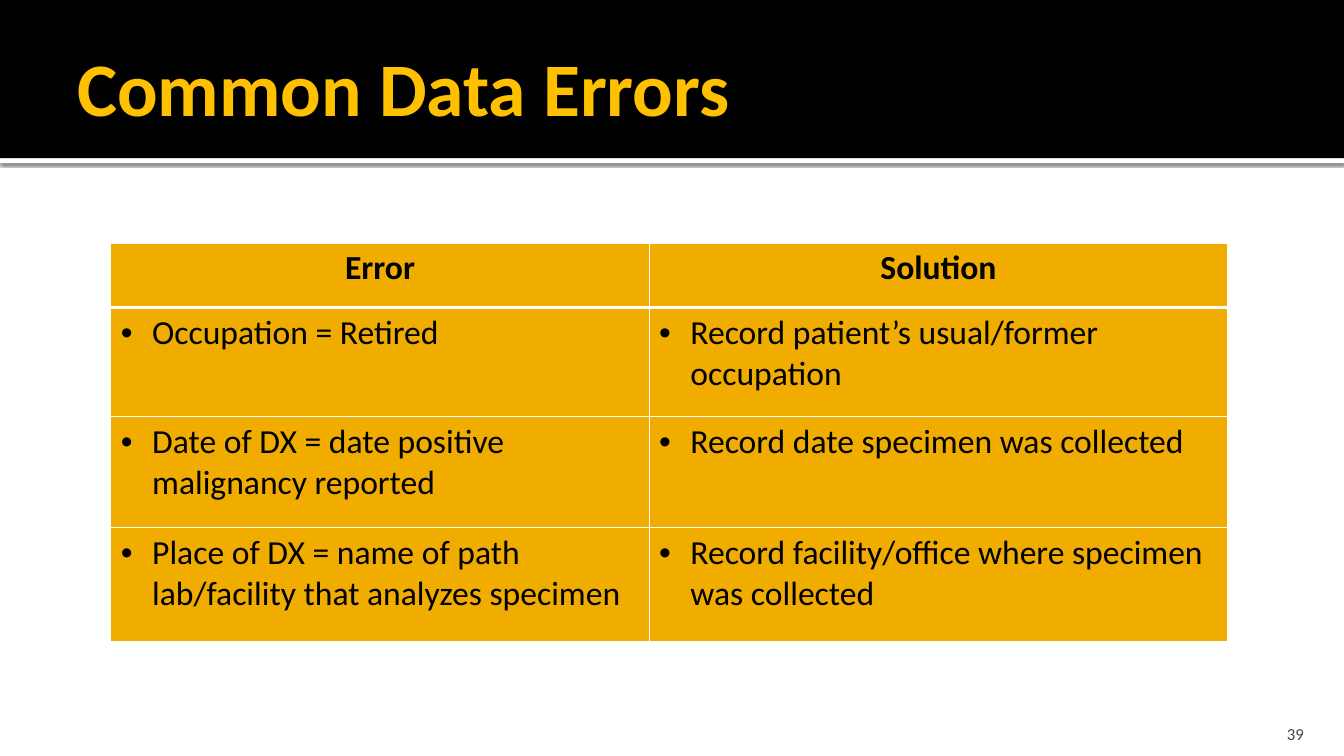
from dataclasses import dataclass
from typing import Any

import lxml.etree
import pptx
import pptx.dml.color
import pptx.enum.shapes
import pptx.enum.text
import pptx.oxml
import pptx.oxml.ns
import pptx.util

RGB = pptx.dml.color.RGBColor
ALIGN = pptx.enum.text.PP_ALIGN
ANCHOR = pptx.enum.text.MSO_ANCHOR
qn = pptx.oxml.ns.qn

BLACK = RGB(0x00, 0x00, 0x00)
WHITE = RGB(0xFF, 0xFF, 0xFF)
GOLD = RGB(0xFF, 0xC0, 0x00)
AMBER = RGB(0xF0, 0xAD, 0x00)
GREY = RGB(0x45, 0x45, 0x45)

WIDE = pptx.util.Inches(13.33)
HIGH = pptx.util.Inches(7.5)
INDENT = pptx.util.Inches(0.31)


@dataclass(frozen=True)
class Box:
    """A place on a grid of 100 columns by 100 rows."""
    left: float
    top: float
    width: float
    height: float

    def spans(self) -> tuple[int, int, int, int]:
        return (cols(self.left), rows(self.top),
                cols(self.width), rows(self.height))


@dataclass(frozen=True)
class Bar:
    box: Box
    fill: RGB
    shadow: bool


@dataclass(frozen=True)
class Style:
    size: int
    color: RGB
    bold: bool = False
    align: Any = ALIGN.LEFT


@dataclass(frozen=True)
class Fix:
    error: str
    answer: str
    height: float


BARS = [
    Bar(Box(0, 20.93, 100, 0.67), WHITE, True),
    Bar(Box(0, 0, 100, 20.93), BLACK, False),
]
TITLE_BOX = Box(5, 2.27, 90, 18.27)
PAGE_BOX = Box(89.72, 94.4, 8.03, 4)
TABLE_BOX = Box(8.25, 32.13, 83.1, 52.8)
WIDTHS = [40.05, 43.05]

TITLE = Style(54, GOLD, True)
PAGE = Style(12, GREY, align=ALIGN.RIGHT)
HEAD = Style(24, BLACK, True, ALIGN.CENTER)
BODY = Style(24, BLACK)

FIXES = [
    Fix("Error", "Solution", 8.53),
    Fix("Occupation = Retired",
        "Record patient’s usual/former occupation", 14.4),
    Fix("Date of DX = date positive malignancy reported",
        "Record date specimen was collected", 14.67),
    Fix("Place of DX = name of path lab/facility that analyzes specimen",
        "Record facility/office where specimen was collected", 15.2),
]


def cols(count: float) -> int:
    return round(WIDE * count / 100)


def rows(count: float) -> int:
    return round(HIGH * count / 100)


def assign(target: Any, values: dict[str, Any]) -> None:
    for name, value in values.items():
        setattr(target, name, value)


def place(shape: Any, box: Box) -> None:
    assign(shape, dict(zip(("left", "top", "width", "height"), box.spans())))


def write(frame: Any, text: str, style: Style) -> None:
    line = frame.paragraphs[0]
    line.alignment = style.align
    run = line.add_run()
    run.text = text
    assign(run.font, {"name": "Calibri", "bold": style.bold,
                      "size": pptx.util.Pt(style.size)})
    run.font.color.rgb = style.color


def frame_up(frame: Any, anchor: Any, insets: tuple[float, ...]) -> None:
    """Fix the wrapping, anchor and left, top, right, bottom insets."""
    sides = ("margin_left", "margin_top", "margin_right", "margin_bottom")
    assign(frame, {"word_wrap": True, "vertical_anchor": anchor,
                   "auto_size": pptx.enum.text.MSO_AUTO_SIZE.NONE})
    assign(frame, dict(zip(sides, map(pptx.util.Inches, insets))))


def draw_bar(slide: Any, bar: Bar) -> None:
    shape = slide.shapes.add_shape(
        pptx.enum.shapes.MSO_SHAPE.RECTANGLE, *bar.box.spans())
    shape.shadow.inherit = False
    shape.fill.solid()
    shape.fill.fore_color.rgb = bar.fill
    shape.line.fill.background()
    if bar.shadow:
        effects = shape.element.spPr.find(qn("a:effectLst"))
        cast = lxml.etree.SubElement(
            effects, qn("a:outerShdw"), blurRad=str(pptx.util.Pt(2.5)),
            dist=str(pptx.util.Pt(0.8)), dir="5400000",
            algn="t", rotWithShape="0")
        color = lxml.etree.SubElement(cast, qn("a:srgbClr"), val=str(BLACK))
        lxml.etree.SubElement(color, qn("a:alpha"), val="60000")


def add_bullet(line: Any) -> None:
    props = line._p.get_or_add_pPr()
    props.set("marL", str(INDENT))
    props.set("indent", str(-INDENT))
    lxml.etree.SubElement(props, qn("a:buFont"), typeface="Arial")
    lxml.etree.SubElement(props, qn("a:buChar"), char="•")


def add_edges(cell: Any, points: dict[str, int]) -> None:
    """Rule the cell's sides in white; call before the cell is filled."""
    props = cell._tc.get_or_add_tcPr()
    for side, width in points.items():
        edge = lxml.etree.SubElement(
            props, qn(f"a:ln{side}"), w=str(pptx.util.Pt(width)))
        solid = lxml.etree.SubElement(edge, qn("a:solidFill"))
        lxml.etree.SubElement(solid, qn("a:srgbClr"), val=str(WHITE))


def draw_table(slide: Any) -> None:
    table = slide.shapes.add_table(
        len(FIXES), len(WIDTHS), *TABLE_BOX.spans()).table
    for column, width in zip(table.columns, WIDTHS):
        column.width = cols(width)
    for index, fix in enumerate(FIXES):
        table.rows[index].height = rows(fix.height)
        for cell, text in zip(table.rows[index].cells,
                              (fix.error, fix.answer)):
            add_edges(cell, {"L": 1, "R": 1, "T": 3 if index == 1 else 1,
                             "B": 3 if index == 0 else 1})
            cell.fill.solid()
            cell.fill.fore_color.rgb = AMBER
            write(cell.text_frame, text, BODY if index else HEAD)
            if index:
                add_bullet(cell.text_frame.paragraphs[0])


def main() -> None:
    deck = pptx.Presentation()
    assign(deck, {"slide_width": WIDE, "slide_height": HIGH})
    slide = deck.slides.add_slide(deck.slide_layouts[5])
    for bar in BARS:
        draw_bar(slide, bar)

    title = slide.shapes.title
    place(title, TITLE_BOX)
    frame_up(title.text_frame, ANCHOR.MIDDLE, (0.1, 0.05, 0.05, 0.05))
    write(title.text_frame, "Common Data Errors", TITLE)
    # The title must stand in front of the black bar.
    slide.shapes.element.append(title.element)

    page = slide.shapes.add_textbox(*PAGE_BOX.spans())
    frame_up(page.text_frame, ANCHOR.BOTTOM, (0.1, 0.05, 0.1, 0))
    write(page.text_frame, "39", PAGE)
    draw_table(slide)
    deck.save("out.pptx")


if __name__ == "__main__":
    main()
